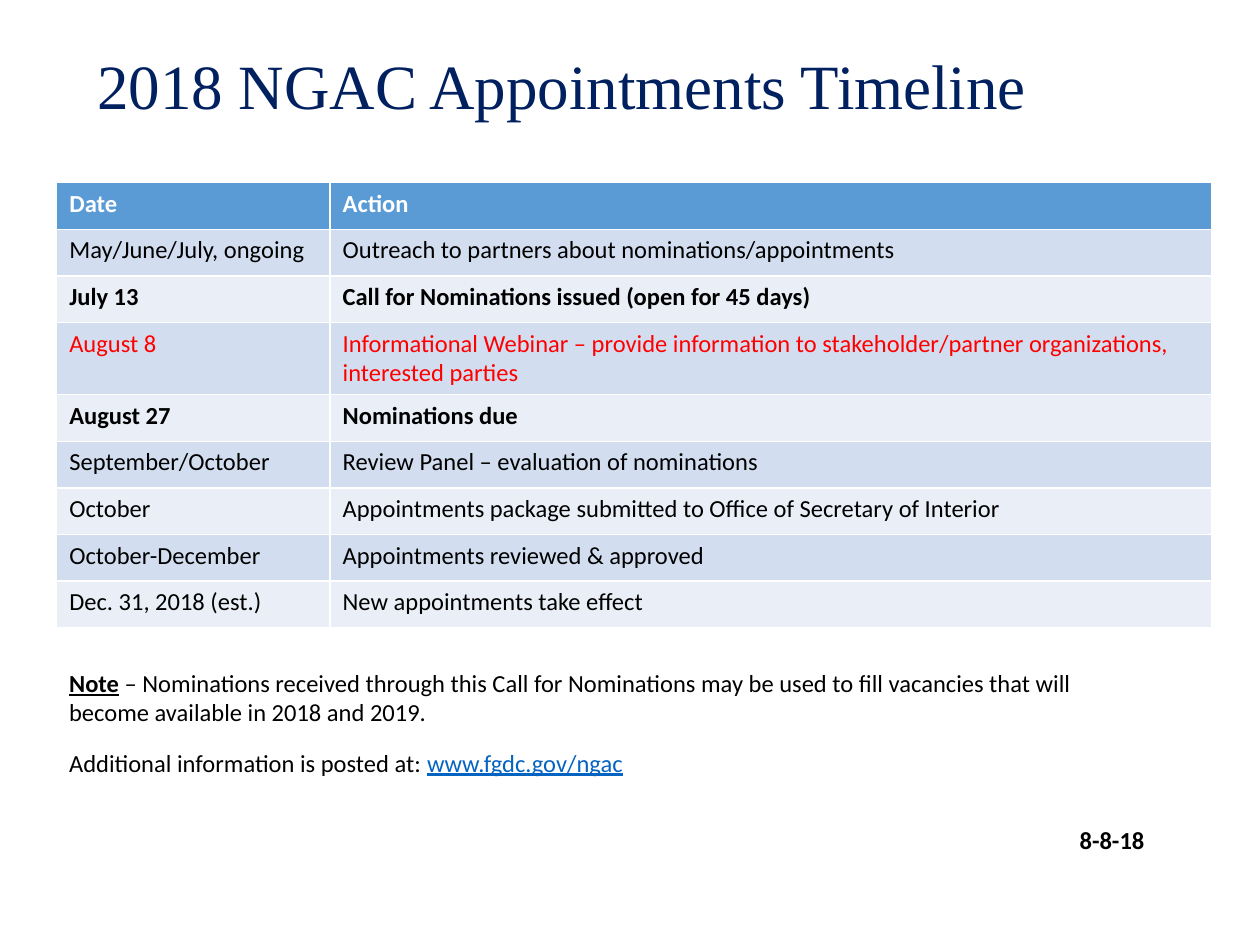
from pptx import Presentation
from pptx.dml.color import RGBColor
from pptx.enum.text import MSO_ANCHOR, MSO_AUTO_SIZE, PP_ALIGN
from pptx.util import Inches, Pt

WHITE, BLACK, RED, NAVY, LINK = "FFFFFF", "000000", "FF0000", "002060", "0563C1"
HEADER_FILL, BAND_FILLS = "5B9BD5", ("D2DEEF", "EAEFF7")

# Date, action, text colour, bold
TIMELINE = [
    ("Date", "Action", WHITE, True),
    ("May/June/July, ongoing", "Outreach to partners about nominations/appointments", BLACK, False),
    ("July 13", "Call for Nominations issued (open for 45 days)", BLACK, True),
    ("August 8", "Informational Webinar – provide information to stakeholder/partner "
     "organizations, interested parties", RED, False),
    ("August 27", "Nominations due", BLACK, True),
    ("September/October", "Review Panel – evaluation of nominations", BLACK, False),
    ("October", "Appointments package submitted to Office of Secretary of Interior", BLACK, False),
    ("October-December", "Appointments reviewed & approved", BLACK, False),
    ("Dec. 31, 2018 (est.)", "New appointments take effect", BLACK, False),
]
ROW_HEIGHT, TWO_LINE_HEIGHT, WEBINAR_ROW = 0.37, 0.56, 3


def color(hex_code):
    return RGBColor.from_string(hex_code)


class SlideBuilder:
    body_font, title_font, body_size = "Calibri", "Times New Roman", 14

    def __init__(self, slide):
        self.slide = slide

    def style(self, font, hex_code=BLACK, bold=None, size=body_size, name=body_font):
        font.name, font.size, font.bold = name, Pt(size), bold
        font.color.rgb = color(hex_code)

    def title(self, text, left, top, width, height):
        title = self.slide.shapes.title
        title.left, title.top = Inches(left), Inches(top)
        title.width, title.height = Inches(width), Inches(height)
        frame = title.text_frame
        frame.text = text
        frame.vertical_anchor = MSO_ANCHOR.MIDDLE
        heading = frame.paragraphs[0]
        heading.alignment = PP_ALIGN.LEFT
        heading.line_spacing = 0.9
        self.style(heading.font, NAVY, size=36, name=self.title_font)

    def table(self, rows, left, top, widths, heights):
        table = self.slide.shapes.add_table(
            len(rows), len(widths), Inches(left), Inches(top),
            Inches(sum(widths)), Inches(sum(heights))).table
        for column, width in zip(table.columns, widths):
            column.width = Inches(width)
        for i, (*texts, text_color, bold) in enumerate(rows):
            table.rows[i].height = Inches(heights[i])
            for j, text in enumerate(texts):
                cell = table.cell(i, j)
                cell.text = text
                cell.fill.solid()
                cell.fill.fore_color.rgb = color(BAND_FILLS[(i - 1) % 2] if i else HEADER_FILL)
                self.style(cell.text_frame.paragraphs[0].font, text_color, bold)

    def text(self, paragraphs, left, top, width, height, wrap=True, bold=None, gap=12):
        """Each paragraph is a list of runs; a run is (text, font settings)."""
        frame = self.slide.shapes.add_textbox(
            Inches(left), Inches(top), Inches(width), Inches(height)).text_frame
        frame.word_wrap = wrap
        frame.auto_size = MSO_AUTO_SIZE.SHAPE_TO_FIT_TEXT
        for i, runs in enumerate(paragraphs):
            paragraph = frame.add_paragraph() if i else frame.paragraphs[0]
            if i:
                paragraph.space_before = Pt(gap)
            self.style(paragraph.font, bold=bold)
            for text, settings in runs:
                run = paragraph.add_run()
                run.text = text
                if "color" in settings:
                    run.font.color.rgb = color(settings["color"])
                run.font.bold = settings.get("bold")
                run.font.underline = settings.get("underline")


def main():
    prs = Presentation()
    prs.slide_width, prs.slide_height = Inches(10), Inches(7.5)
    page = SlideBuilder(prs.slides.add_slide(prs.slide_layouts[5]))

    # Heading
    page.title("2018 NGAC Appointments Timeline", 0.67, 0.25, 8.5, 0.92)

    # Timeline of dates and actions
    heights = [TWO_LINE_HEIGHT if i == WEBINAR_ROW else ROW_HEIGHT for i in range(len(TIMELINE))]
    page.table(TIMELINE, 0.45, 1.45, (2.17, 7), heights)

    # Date of this version
    page.text([[("8-8-18", {})]], 8.47, 6.5, 0.72, 0.34, wrap=False, bold=True)

    # Notes below the table
    page.text([
        [("Note", {"bold": True, "underline": True}),
         (" – Nominations received through this Call for Nominations may be used to fill "
          "vacancies that will become available in 2018 and 2019.", {})],
        [("Additional information is posted at: ", {}),
         ("www.fgdc.gov/ngac", {"color": LINK, "underline": True})],
    ], 0.45, 5.25, 8.75, 1.21)

    prs.save("out.pptx")


if __name__ == "__main__":
    main()
